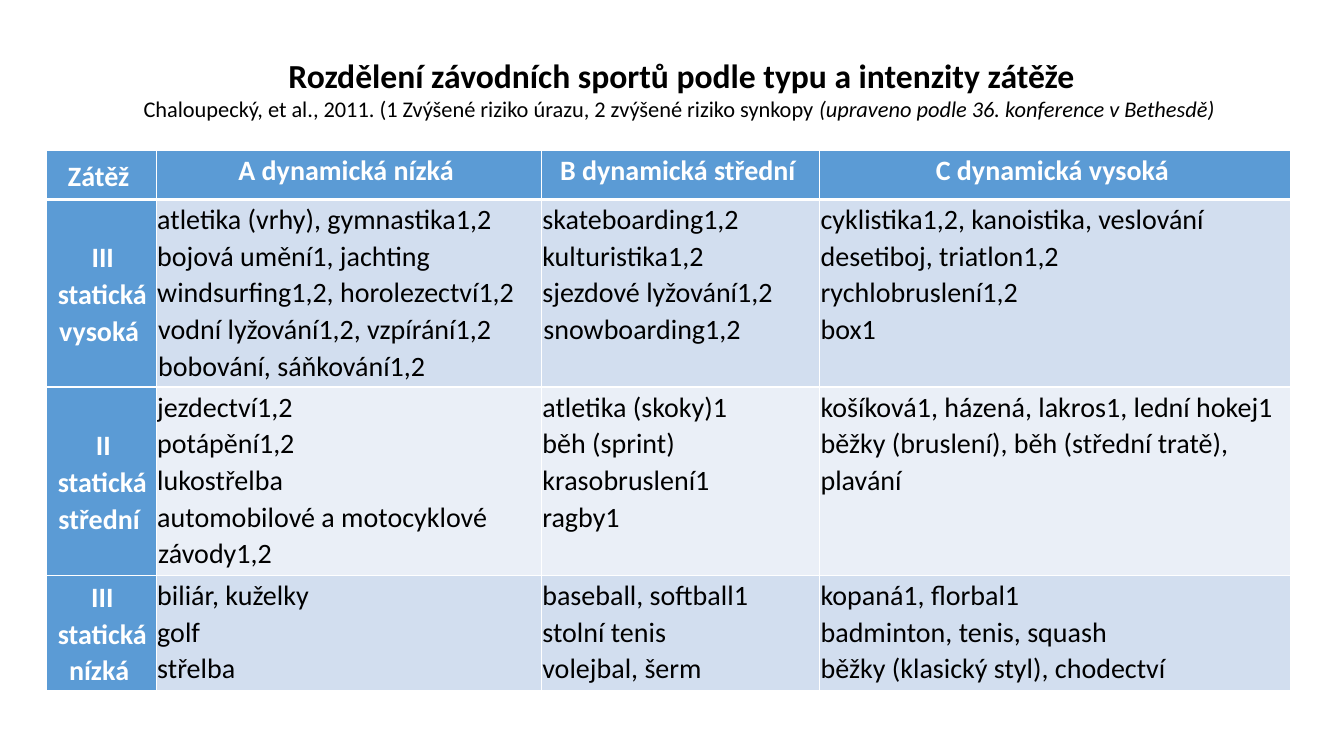
from lxml import etree
from pptx import Presentation
from pptx.dml.color import RGBColor
from pptx.enum.text import MSO_ANCHOR, MSO_AUTO_SIZE, PP_ALIGN
from pptx.oxml.ns import qn
from pptx.util import Inches, Pt

TOP, MIDDLE = MSO_ANCHOR.TOP, MSO_ANCHOR.MIDDLE
LEFT, CENTER, JUSTIFY = PP_ALIGN.LEFT, PP_ALIGN.CENTER, PP_ALIGN.JUSTIFY
NO_FIT = MSO_AUTO_SIZE.NONE

BLACK = RGBColor(0x00, 0x00, 0x00)
WHITE = RGBColor(0xFF, 0xFF, 0xFF)
BLUE = RGBColor(0x5B, 0x9B, 0xD5)
BAND = RGBColor(0xD2, 0xDE, 0xEF)
PALE = RGBColor(0xEA, 0xEF, 0xF7)
FONT = "Calibri"

COLS = [1.09, 3.82, 2.76, 4.67]
ROWS = [0.49, 1.86, 1.87, 1.14]
HEADS = ["Zátěž ", "A dynamická nízká ", "B dynamická střední ", "C dynamická vysoká "]
LOADS = ["III statická vysoká ", "II statická střední ", "III statická nízká "]
LOAD_INDENTS = [0.01, 0.02, 0]
# Each sport cell is a list of paragraphs
SPORTS = [
    [
        ["atletika (vrhy), gymnastika1,2", "bojová umění1, jachting",
         "windsurfing1,2, horolezectví1,2 vodní lyžování1,2, vzpírání1,2 bobování, sáňkování1,2"],
        ["skateboarding1,2", "kulturistika1,2", "sjezdové lyžování1,2 snowboarding1,2"],
        ["cyklistika1,2, kanoistika, veslování desetiboj, triatlon1,2", "rychlobruslení1,2", "box1"],
    ],
    [
        ["jezdectví1,2", "potápění1,2", "lukostřelba", "automobilové a motocyklové závody1,2"],
        ["atletika (skoky)1", "běh (sprint)", "krasobruslení1", "ragby1"],
        ["košíková1, házená, lakros1, lední hokej1", "běžky (bruslení), běh (střední tratě),", "plavání"],
    ],
    [
        ["biliár, kuželky", "golf", "střelba"],
        ["baseball, softball1", "stolní tenis", "volejbal, šerm"],
        ["kopaná1, florbal1", "badminton, tenis, squash", "běžky (klasický styl), chodectví "],
    ],
]


def add_text(para, text, size=20, color=BLACK, bold=False, italic=False, align=LEFT, space=1.0):
    para.alignment = align
    para.line_spacing = space
    run = para.add_run()
    run.text = text
    font = run.font
    font.name, font.size = FONT, Pt(size)
    font.bold, font.italic = bold, italic
    font.color.rgb = color


def set_edges(cell, top=1, bottom=1):
    props = cell._tc.get_or_add_tcPr()
    for side, width in (("L", 1), ("R", 1), ("T", top), ("B", bottom)):
        line = etree.SubElement(props, qn(f"a:ln{side}"), w=str(Pt(width)))
        fill = etree.SubElement(line, qn("a:solidFill"))
        etree.SubElement(fill, qn("a:srgbClr"), val=str(WHITE))


def fill_cell(cell, lines, fill, margin=0.01, indent=-0.01, anchor=TOP, top=1, bottom=1, **style):
    set_edges(cell, top, bottom)
    cell.fill.solid()
    cell.fill.fore_color.rgb = fill
    cell.vertical_anchor = anchor
    cell.margin_left = cell.margin_top = Inches(0.01)
    cell.margin_right = cell.margin_bottom = 0
    frame = cell.text_frame
    for i, line in enumerate(lines):
        para = frame.add_paragraph() if i else frame.paragraphs[0]
        props = para._p.get_or_add_pPr()
        props.set("marL", str(Inches(margin)))
        props.set("indent", str(Inches(indent)))
        add_text(para, line, space=1.07, **style)


def add_title(slide):
    title = slide.shapes.title
    title.left, title.top = Inches(0.72), Inches(0.49)
    title.width, title.height = Inches(12.08), Inches(0.77)
    frame = title.text_frame
    frame.word_wrap = True
    frame.auto_size = NO_FIT
    frame.vertical_anchor = TOP
    add_text(frame.paragraphs[0], "Rozdělení závodních sportů podle typu a intenzity zátěže",
             size=24, bold=True, align=CENTER)
    note = frame.add_paragraph()
    add_text(note, "Chaloupecký, et al., 2011. (1 Zvýšené riziko úrazu, 2 zvýšené riziko synkopy ",
             size=16, align=CENTER)
    add_text(note, "(upraveno podle 36. konference v Bethesdě) ", size=16, italic=True, align=CENTER)


def add_grid(slide):
    table = slide.shapes.add_table(len(ROWS), len(COLS), Inches(0.46), Inches(1.49),
                                   Inches(sum(COLS)), Inches(sum(ROWS))).table
    for col, width in zip(table.columns, COLS):
        col.width = Inches(width)
    for row, height in zip(table.rows, ROWS):
        row.height = Inches(height)

    # Header row
    head = dict(color=WHITE, bold=True, align=CENTER)
    for c, text in enumerate(HEADS):
        fill_cell(table.cell(0, c), [text], BLUE, anchor=TOP if c else MIDDLE, bottom=3, **head)

    # Load levels and their sports
    for r, (load, indent, sports) in enumerate(zip(LOADS, LOAD_INDENTS, SPORTS), 1):
        top = 3 if r == 1 else 1
        fill_cell(table.cell(r, 0), [load], BLUE, indent=indent, anchor=MIDDLE, top=top, **head)
        for c, lines in enumerate(sports, 1):
            last = c == len(sports)
            align = JUSTIFY if last and r == len(LOADS) else LEFT
            fill_cell(table.cell(r, c), lines, BAND if r % 2 else PALE,
                      margin=0 if last else 0.01, top=top, align=align)


def main():
    deck = Presentation()
    deck.slide_width, deck.slide_height = Inches(13.33), Inches(7.5)
    slide = deck.slides.add_slide(deck.slide_layouts[5])
    add_title(slide)
    add_grid(slide)
    deck.save("out.pptx")


if __name__ == "__main__":
    main()
